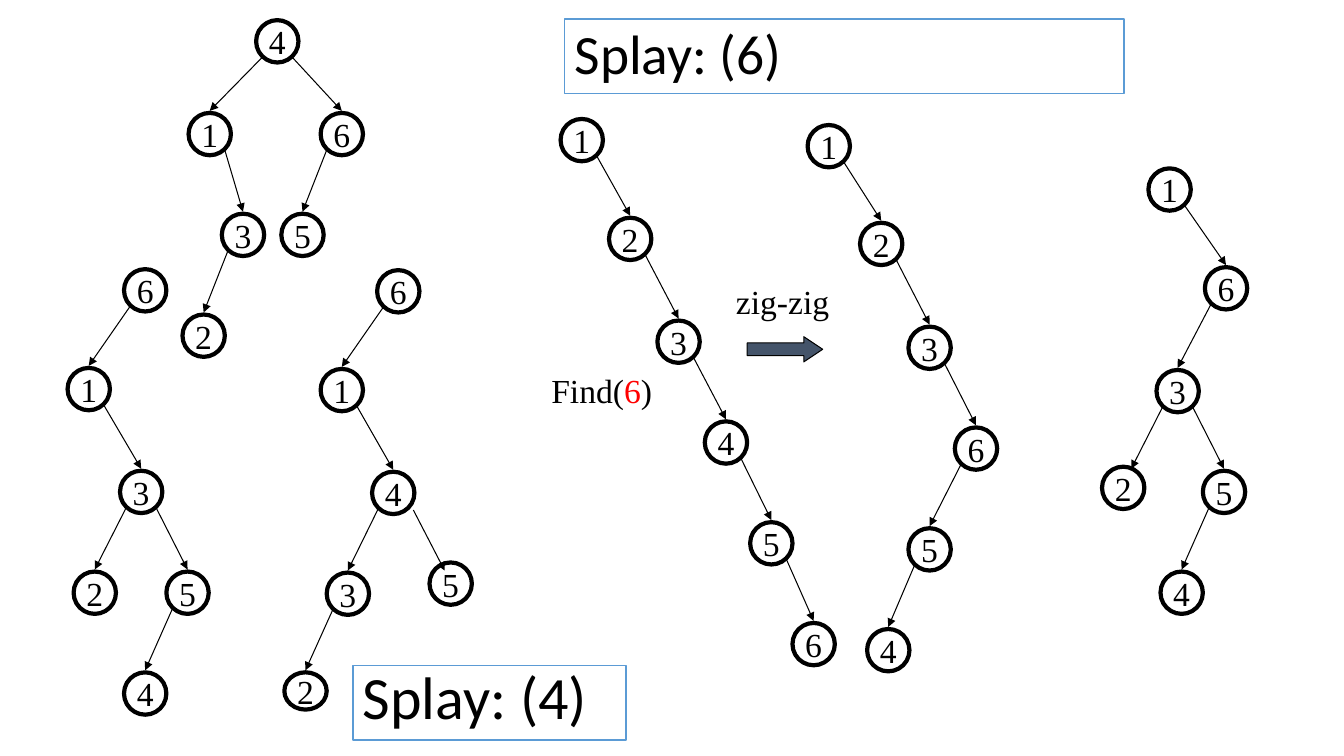
import lxml.etree
import pptx
import pptx.dml.color
import pptx.enum.shapes
import pptx.enum.text
import pptx.oxml.ns
import pptx.util

Inches, Pt = pptx.util.Inches, pptx.util.Pt
SHAPE = pptx.enum.shapes.MSO_SHAPE
ANCHOR = pptx.enum.text.MSO_ANCHOR
ALIGN = pptx.enum.text.PP_ALIGN
NO_FIT = pptx.enum.text.MSO_AUTO_SIZE.NONE
qn = pptx.oxml.ns.qn

BLACK = pptx.dml.color.RGBColor(0x00, 0x00, 0x00)
WHITE = pptx.dml.color.RGBColor(0xFF, 0xFF, 0xFF)
RED = pptx.dml.color.RGBColor(0xFF, 0x00, 0x00)
BLUE = pptx.dml.color.RGBColor(0x5B, 0x9B, 0xD5)
SLATE = pptx.dml.color.RGBColor(0x44, 0x54, 0x6A)

NODE = 0.42   # node diameter
INSET = 0.06  # edge start, in from the side of the parent
DROP = 0.37   # edge start, below the top of the parent
GAP = 0.02    # space between an arrow tip and the child

# Each tree: (key, left, top, parent key[, height]);
# a child without parent has a free edge
TREES = [
    [(4, 2.54, 0.2, None), (1, 1.87, 1.12, 4), (6, 3.18, 1.12, 4),
     (3, 2.2, 2.12, 1), (5, 2.79, 2.12, 6), (2, 1.81, 3.12, 3)],
    [(6, 1.23, 2.67, None), (1, 0.67, 3.65, 6), (3, 1.19, 4.67, 1),
     (2, 0.73, 5.67, 3), (5, 1.65, 5.67, 3), (4, 1.23, 6.67, 5)],
    [(6, 3.74, 2.68, None), (1, 3.18, 3.66, 6), (4, 3.69, 4.68, 1),
     (3, 3.24, 5.68, 4), (5, 4.26, 5.58, None), (2, 2.82, 6.67, 3, 0.37)],
    [(1, 5.56, 1.18, None), (2, 6.04, 2.16, 1), (3, 6.52, 3.18, 2),
     (4, 6.99, 4.18, 3), (5, 7.44, 5.18, 4), (6, 7.86, 6.18, 5)],
    [(1, 8.01, 1.24, None), (2, 8.53, 2.21, 1), (3, 9.01, 3.24, 2),
     (6, 9.47, 4.24, 3), (5, 9.01, 5.24, 6), (4, 8.6, 6.24, 5)],
    [(1, 11.39, 1.67, None), (6, 11.95, 2.65, 1), (3, 11.47, 3.67, 6),
     (2, 10.93, 4.63, None), (5, 11.93, 4.67, 3), (4, 11.51, 5.67, 5)],
]
FREE_EDGES = [(4.1, 5.06, 4.41, 5.66), (11.53, 4.04, 11.22, 4.65)]


def apply(target, values):
    for name, value in values.items():
        setattr(target, name, value)


def write(tf, runs, font, size, frame, para):
    """Fill a text frame with one paragraph of (text, colour) runs."""
    apply(tf, frame)
    p = tf.paragraphs[0]
    apply(p, para)
    for text, color in runs:
        r = p.add_run()
        r.text = text
        apply(r.font, {"name": font, "size": Pt(size)})
        r.font.color.rgb = color


def style(sp, fill, line, width):
    if fill is None:
        sp.fill.background()
    else:
        sp.fill.solid()
        sp.fill.fore_color.rgb = fill
    sp.line.color.rgb = line
    sp.line.width = Pt(width)


def add_shape(s, kind, x, y, w, h, fill, line, width):
    sp = s.shapes.add_shape(kind, Inches(x), Inches(y), Inches(w), Inches(h))
    sp.shadow.inherit = False
    style(sp, fill, line, width)
    return sp


def add_node(s, key, x, y, height=NODE):
    sp = add_shape(s, SHAPE.OVAL, x, y, NODE, height, None, BLACK, 3)
    write(sp.text_frame, [(str(key), BLACK)], "Times New Roman", 24,
          {"word_wrap": False, "vertical_anchor": ANCHOR.MIDDLE},
          {"alignment": ALIGN.CENTER})


def add_edge(s, x1, y1, x2, y2):
    c = s.shapes.add_connector(pptx.enum.shapes.MSO_CONNECTOR.STRAIGHT,
                               Inches(x1), Inches(y1), Inches(x2), Inches(y2))
    c.line.color.rgb = BLACK
    c.line.width = Pt(0.75)
    props = c.element.spPr
    lxml.etree.SubElement(props.find(qn("a:ln")), qn("a:tailEnd"), type="triangle")
    lxml.etree.SubElement(props, qn("a:effectLst"))


def add_tree(s, nodes):
    places = {node[0]: node[1:3] for node in nodes}
    for key, x, y, parent, *height in nodes:
        add_node(s, key, x, y, *height)
        if parent is not None:
            px, py = places[parent]
            start = px + (INSET if x < px else NODE - INSET)
            add_edge(s, start, py + DROP, x + NODE / 2, y - GAP)


def add_label(s, x, y, w, runs):
    # No right margin, so that the text keeps to one line
    sp = s.shapes.add_textbox(Inches(x), Inches(y), Inches(w), Inches(0.5))
    write(sp.text_frame, runs, "Times New Roman", 24,
          {"word_wrap": True, "auto_size": NO_FIT, "margin_right": Inches(0)},
          {"alignment": ALIGN.LEFT})


def write_heading(sp, text, size, spacing):
    write(sp.text_frame, [(text, BLACK)], "Calibri", size,
          {"word_wrap": True, "auto_size": NO_FIT, "vertical_anchor": ANCHOR.MIDDLE},
          {"alignment": ALIGN.LEFT, "line_spacing": spacing})


def main():
    prs = pptx.Presentation()
    apply(prs, {"slide_width": Inches(13.33), "slide_height": Inches(7.5)})
    s = prs.slides.add_slide(prs.slide_layouts[5])

    # Title
    title = s.shapes.title
    apply(title, {"left": Inches(5.6), "top": Inches(0.19),
                  "width": Inches(5.55), "height": Inches(0.74)})
    style(title, WHITE, BLUE, 1)
    write_heading(title, "Splay: (6)", 39.6, 0.9)

    # Trees
    for nodes in TREES:
        add_tree(s, nodes)
    for edge in FREE_EDGES:
        add_edge(s, *edge)

    # Step arrow and labels
    step = add_shape(s, SHAPE.RIGHT_ARROW, 7.41, 3.34, 0.75, 0.25, SLATE, BLACK, 0.75)
    step.adjustments[0] = 0.5
    step.adjustments[1] = 0.75
    add_label(s, 5.37, 3.62, 1.2, [("Find(", BLACK), ("6", RED), (")", BLACK)])
    add_label(s, 7.2, 2.74, 1.12, [("zig-zig", BLACK)])

    # Second heading
    box = add_shape(s, SHAPE.RECTANGLE, 3.5, 6.6, 2.71, 0.74, WHITE, BLUE, 1)
    write_heading(box, "Splay: (4)", 42.9, 0.8)

    prs.save("out.pptx")


if __name__ == "__main__":
    main()
